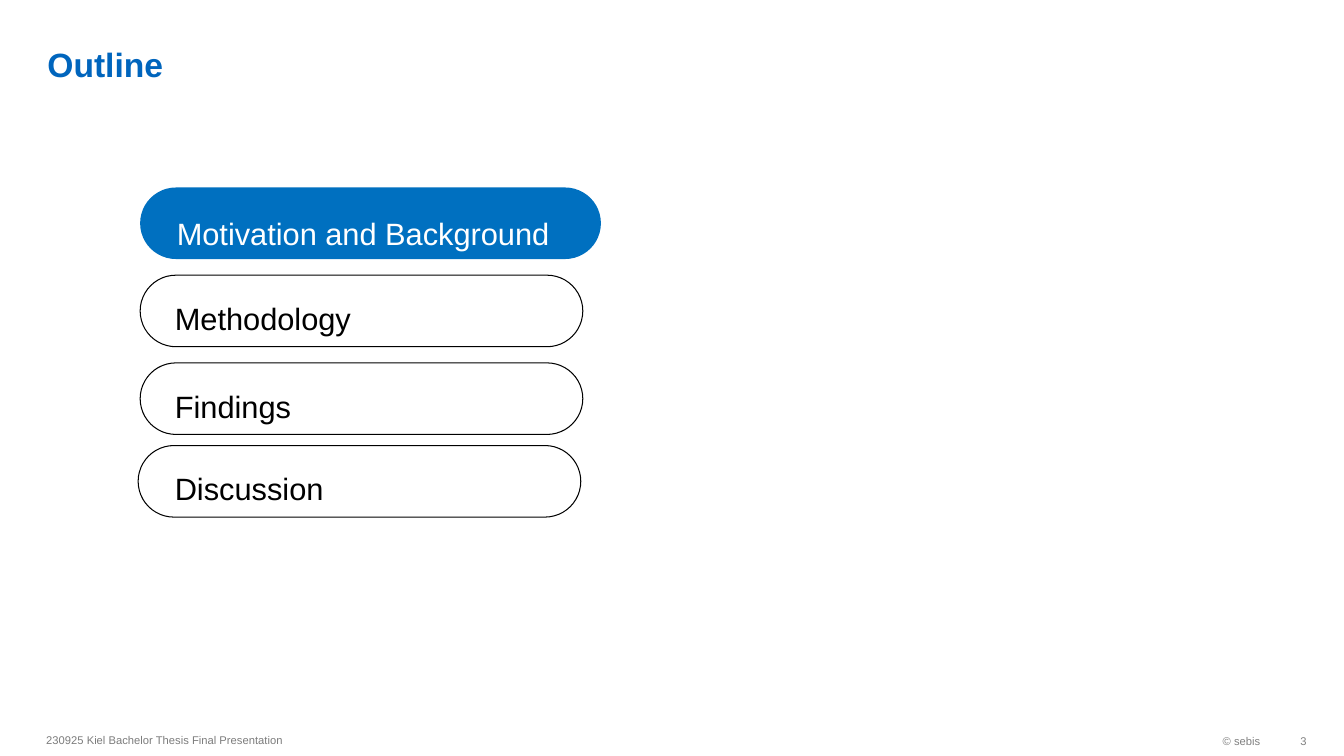
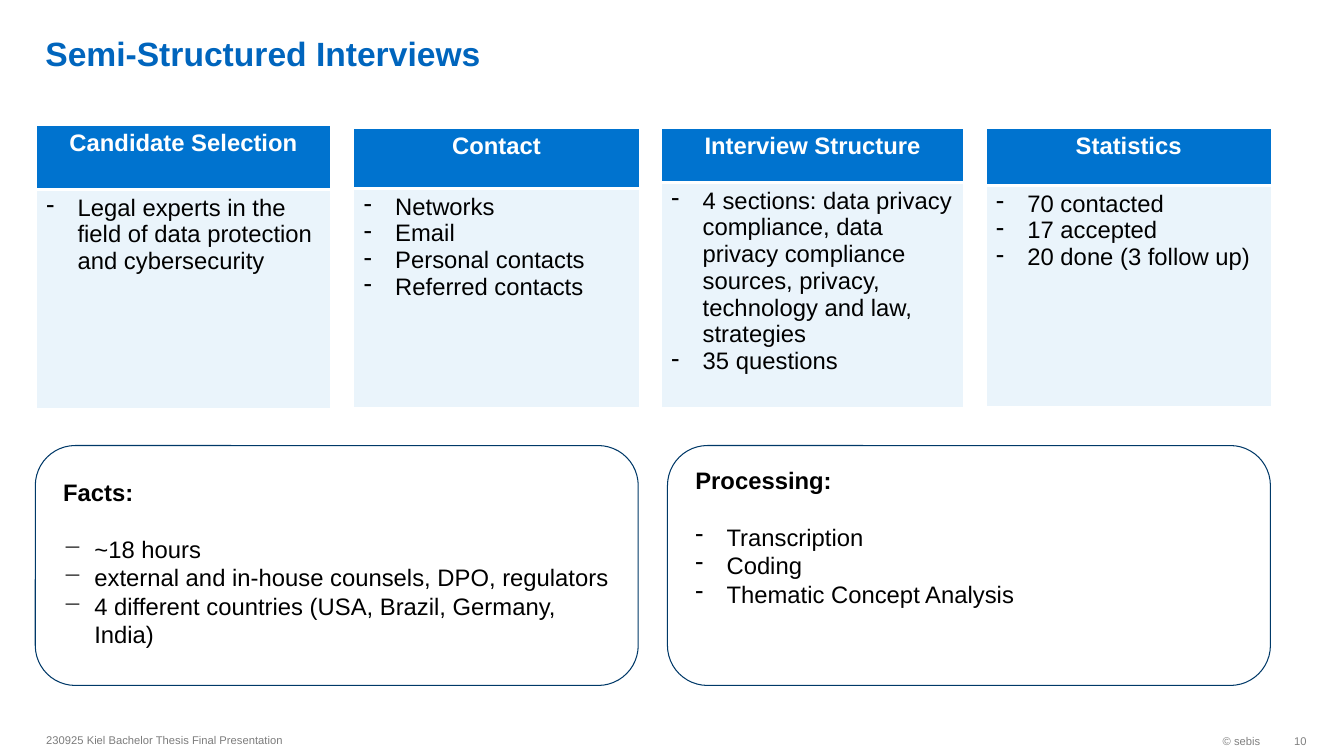
from dataclasses import dataclass

from lxml import etree
from pptx import Presentation
from pptx.dml.color import RGBColor
from pptx.enum.shapes import MSO_SHAPE
from pptx.enum.text import MSO_ANCHOR, MSO_AUTO_SIZE, PP_ALIGN
from pptx.oxml.ns import qn
from pptx.util import Emu, Pt

EMU_PER_PX = 9144
ROUNDED = MSO_SHAPE.ROUNDED_RECTANGLE
TOP, MIDDLE, BOTTOM = MSO_ANCHOR.TOP, MSO_ANCHOR.MIDDLE, MSO_ANCHOR.BOTTOM
LEFT, CENTER, RIGHT = PP_ALIGN.LEFT, PP_ALIGN.CENTER, PP_ALIGN.RIGHT
NO_AUTOFIT = MSO_AUTO_SIZE.NONE
TITLE_ONLY = 5
BULLET_INDENT = 31
CORNER_INSET = 0.29


@dataclass(frozen=True)
class Theme:
    font: str = "Arial"
    title: str = "0065BD"
    active: str = "0070C0"
    header: str = "0073CF"
    body: str = "EAF4FB"
    outline: str = "003968"
    white: str = "FFFFFF"
    black: str = "000000"
    footer: str = "7C7C7C"
    page: str = "808080"
    title_size: int = 24
    topic_size: int = 22
    text_size: int = 17
    footer_size: int = 8
    table_leading: float = 19.1
    card_leading: float = 20.4


THEME = Theme()


@dataclass(frozen=True)
class Topic:
    label: str
    left: int
    top: int
    width: int
    label_left: int
    drop: int
    active: bool = False


@dataclass(frozen=True)
class Column:
    heading: str
    items: tuple[str, ...]
    left: int
    top: int
    width: int
    header_height: int
    body_height: int


@dataclass(frozen=True)
class Card:
    heading: str
    items: tuple[str, ...]
    left: int
    inset_top: int
    bullet: str


TOPICS = (
    Topic("Motivation and Background", 139, 186, 457, 175, 19, active=True),
    Topic("Methodology", 139, 273, 439, 173, 15),
    Topic("Findings", 139, 360, 439, 173, 14),
    Topic("Discussion", 137, 442, 439, 173, 13),
)
TOPIC_HEIGHT = 71

COLUMNS = (
    Column("Candidate Selection",
           ("Legal experts in the field of data protection and cybersecurity",),
           36, 124, 292, 64, 217),
    Column("Contact", ("Networks", "Email", "Personal contacts", "Referred contacts"),
           351, 127, 283, 60, 217),
    Column("Interview Structure",
           ("4 sections: data privacy compliance, data privacy compliance sources, "
            "privacy, technology and law, strategies", "35 questions"),
           656, 127, 300, 54, 223),
    Column("Statistics", ("70 contacted", "17 accepted", "20 done (3 follow up)"),
           978, 127, 283, 57, 219),
)

CARDS = (
    Card("Facts:",
         ("~18 hours", "external and in-house counsels, DPO, regulators",
          "4 different countries (USA, Brazil, Germany, India)"), 35, 20, "−"),
    Card("Processing:", ("Transcription", "Coding", "Thematic Concept Analysis"),
         662, 8, "-"),
)
CARD_TOP, CARD_WIDTH, CARD_HEIGHT, CARD_INSET = 442, 598, 238, 16


def px(length: int) -> Emu:
    return Emu(length * EMU_PER_PX)


def box(left: int, top: int, width: int, height: int) -> tuple[Emu, ...]:
    return px(left), px(top), px(width), px(height)


def rgb(color: str) -> RGBColor:
    return RGBColor.from_string(color)


def set_frame(frame, anchor=MIDDLE, insets=(10, 5, 10, 5)) -> None:
    frame.word_wrap = True
    frame.auto_size = NO_AUTOFIT
    frame.vertical_anchor = anchor
    (frame.margin_left, frame.margin_top,
     frame.margin_right, frame.margin_bottom) = map(px, insets)


def write(frame, text: str, *, size: int = THEME.text_size, color: str = THEME.black,
          bold: bool = False, align=LEFT, bullet: str = "",
          leading: float = 0, after: float = 0) -> None:
    paragraph = frame.paragraphs[0]
    if paragraph.runs:
        paragraph = frame.add_paragraph()
    if bullet:
        properties = paragraph._p.get_or_add_pPr()
        properties.set("marL", str(px(BULLET_INDENT)))
        properties.set("indent", str(-px(BULLET_INDENT)))
        etree.SubElement(properties, qn("a:buChar")).set("char", bullet)
    paragraph.alignment = align
    if leading:
        paragraph.line_spacing = Pt(leading)
    if after:
        paragraph.space_after = Pt(after)
    run = paragraph.add_run()
    run.text = text
    run.font.name = THEME.font
    run.font.size = Pt(size)
    run.font.bold = bold
    run.font.color.rgb = rgb(color)


def add_footer_text(slide, text: str, area: tuple[int, ...], color: str,
                    align, right_inset: int = 10) -> None:
    frame = slide.shapes.add_textbox(*box(*area)).text_frame
    set_frame(frame, insets=(10, 5, right_inset, 5))
    write(frame, text, size=THEME.footer_size, color=color, align=align)


def add_slide(deck, title: str, page: int, title_left: int, title_bottom: int):
    slide = deck.slides.add_slide(deck.slide_layouts[TITLE_ONLY])
    heading = slide.shapes.title
    heading.left, heading.top, heading.width, heading.height = box(
        title_left, 0, 1158, title_bottom)
    set_frame(heading.text_frame, BOTTOM, (10, 0, 10, 0))
    write(heading.text_frame, title, size=THEME.title_size, color=THEME.title, bold=True)
    add_footer_text(slide, "230925 Kiel Bachelor Thesis Final Presentation",
                    (36, 718, 630, 32), THEME.footer, LEFT)
    add_footer_text(slide, "© sebis", (1026, 719, 234, 32), THEME.page, RIGHT)
    add_footer_text(slide, str(page), (1260, 719, 36, 32), THEME.page, RIGHT, 0)
    return slide


def add_rounded(slide, area: tuple[int, ...], fill: str = "", line: str = ""):
    panel = slide.shapes.add_shape(ROUNDED, *box(*area))
    panel.shadow.inherit = False
    if fill:
        panel.fill.solid()
        panel.fill.fore_color.rgb = rgb(fill)
    else:
        panel.fill.background()
    if line:
        panel.line.color.rgb = rgb(line)
        panel.line.width = Pt(0.75)
    else:
        panel.line.fill.background()
    return panel


def add_topic(slide, topic: Topic) -> None:
    area = (topic.left, topic.top, topic.width, TOPIC_HEIGHT)
    if topic.active:
        pill, color = add_rounded(slide, area, fill=THEME.active), THEME.white
    else:
        pill, color = add_rounded(slide, area, line=THEME.black), THEME.black
    pill.adjustments[0] = 0.5
    corner = round(CORNER_INSET * TOPIC_HEIGHT / 2)
    set_frame(pill.text_frame, MIDDLE,
              (topic.label_left - topic.left - corner, topic.drop, 0, 0))
    write(pill.text_frame, topic.label, size=THEME.topic_size, color=color)


def style_cell(cell, fill: str, top: int, bottom: int) -> None:
    properties = cell._tc.get_or_add_tcPr()
    for side, width in (("L", 1), ("R", 1), ("T", top), ("B", bottom)):
        border = etree.SubElement(properties, qn(f"a:ln{side}"))
        border.set("w", str(Pt(width)))
        color = etree.SubElement(etree.SubElement(border, qn("a:solidFill")),
                                 qn("a:srgbClr"))
        color.set("val", THEME.white)
    cell.fill.solid()
    cell.fill.fore_color.rgb = rgb(fill)
    cell.vertical_anchor = TOP


def add_column(slide, column: Column) -> None:
    height = column.header_height + column.body_height
    table = slide.shapes.add_table(
        2, 1, *box(column.left, column.top, column.width, height)).table
    table.rows[0].height = px(column.header_height)
    table.rows[1].height = px(column.body_height)
    table.horz_banding = False
    header, body = table.cell(0, 0), table.cell(1, 0)
    style_cell(header, THEME.header, 1, 3)
    style_cell(body, THEME.body, 3, 1)
    write(header.text_frame, column.heading, color=THEME.white, bold=True,
          align=CENTER, leading=THEME.table_leading)
    for item in column.items:
        write(body.text_frame, item, bullet="-", leading=THEME.table_leading)


def add_card(slide, card: Card) -> None:
    panel = add_rounded(slide, (card.left, CARD_TOP, CARD_WIDTH, CARD_HEIGHT),
                        fill=THEME.white, line=THEME.outline)
    frame = panel.text_frame
    set_frame(frame, TOP, (CARD_INSET, card.inset_top, CARD_INSET, 0))
    write(frame, card.heading, bold=True, leading=THEME.card_leading,
          after=THEME.card_leading)
    for item in card.items:
        write(frame, item, bullet=card.bullet, leading=THEME.card_leading)


def main() -> None:
    deck = Presentation()
    deck.slide_width, deck.slide_height = px(1333), px(750)
    outline = add_slide(deck, "Outline", 3, 37, 84)
    for topic in TOPICS:
        add_topic(outline, topic)
    interviews = add_slide(deck, "Semi-Structured Interviews", 10, 35, 73)
    for column in COLUMNS:
        add_column(interviews, column)
    for card in CARDS:
        add_card(interviews, card)
    deck.save("out.pptx")


if __name__ == "__main__":
    main()
